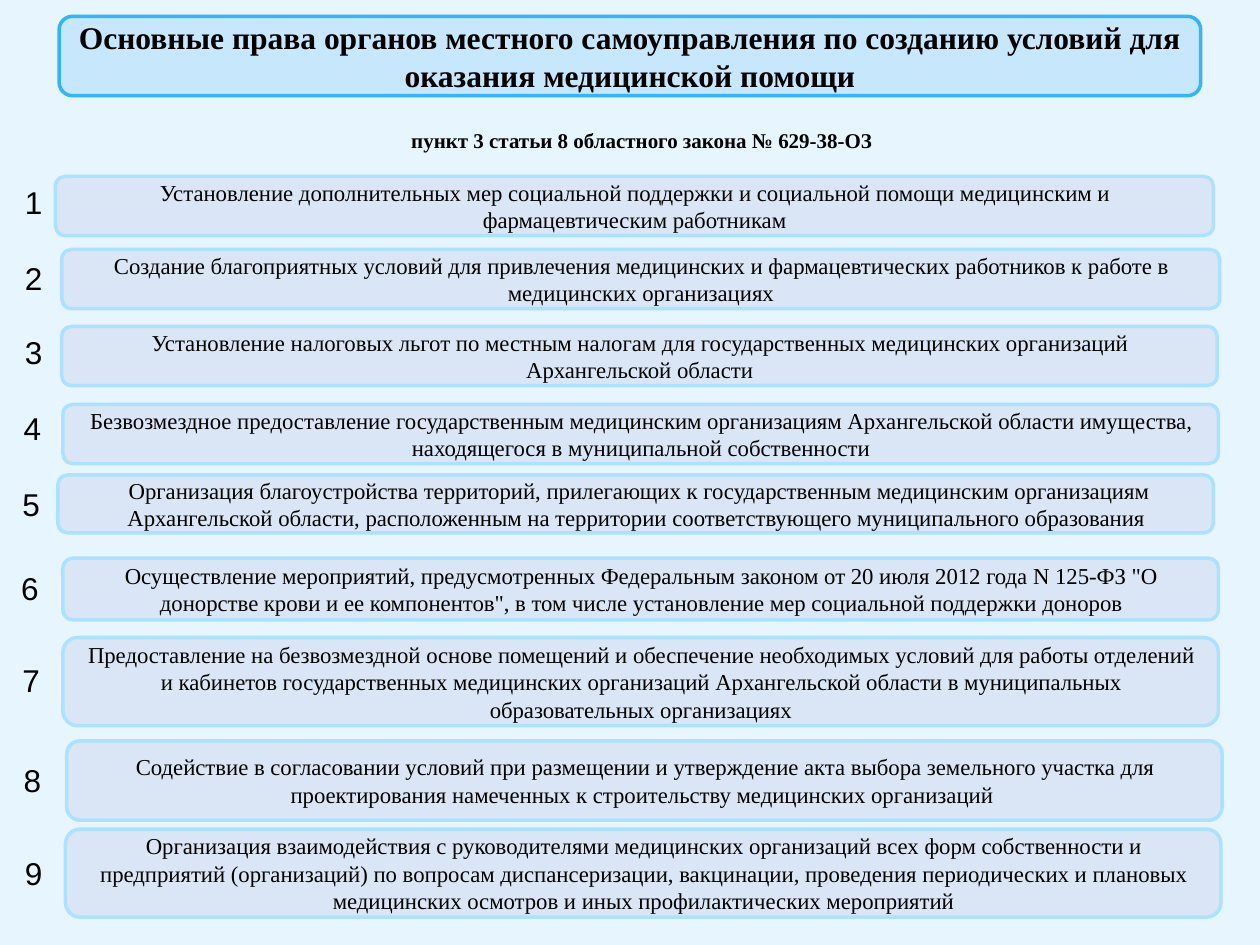
"""Build a slide listing the nine rights of local authorities in health care."""
from dataclasses import dataclass

from pptx import Presentation
from pptx.dml.color import RGBColor
from pptx.enum.shapes import MSO_SHAPE as Shape
from pptx.enum.text import MSO_ANCHOR as Anchor, MSO_AUTO_SIZE as AutoSize, PP_ALIGN as Align
from pptx.util import Inches, Pt


@dataclass(frozen=True)
class Theme:
    background: str = "E6F5FE"
    title_fill: str = "C6E7FC"
    title_line: str = "31B6FD"
    right_fill: str = "DAE6F6"
    right_line: str = "ADE2FE"
    ink: str = "000000"
    serif: str = "Times New Roman"
    sans: str = "Arial"
    title_size: int = 18
    law_size: int = 12
    right_size: int = 13
    number_size: int = 18
    line_width: int = 2


@dataclass(frozen=True)
class Box:
    col: int
    row: int
    cols: int
    rows: int


@dataclass(frozen=True)
class Right:
    box: Box
    number_col: int
    number_row: int
    text: str


THEME = Theme()
COLS, ROWS = 1000, 750
WIDTH, HEIGHT = Inches(10), Inches(7.5)

TITLE = "Основные права органов местного самоуправления по созданию условий для оказания медицинской помощи"
LAW = " пункт 3 статьи 8 областного закона № 629-38-ОЗ"
RIGHTS = [
    Right(Box(44, 140, 919, 47), 10, 140,
          "Установление дополнительных мер социальной поддержки и социальной помощи "
          "медицинским и фармацевтическим работникам"),
    Right(Box(49, 198, 919, 47), 10, 201,
          "Создание благоприятных условий для привлечения медицинских и фармацевтических "
          "работников к работе в медицинских организациях"),
    Right(Box(49, 259, 917, 47), 10, 259,
          "Установление налоговых льгот по местным налогам для государственных "
          "медицинских организаций Архангельской области"),
    Right(Box(50, 321, 917, 47), 9, 320,
          "Безвозмездное предоставление государственным медицинским организациям "
          "Архангельской области имущества, находящегося в муниципальной собственности"),
    Right(Box(46, 377, 917, 46), 8, 380,
          " Организация благоустройства территорий, прилегающих к государственным "
          "медицинским организациям Архангельской области, расположенным на территории "
          "соответствующего муниципального образования"),
    Right(Box(50, 443, 917, 49), 7, 447,
          "Осуществление мероприятий, предусмотренных Федеральным законом от 20 июля "
          "2012 года N 125-ФЗ \"О донорстве крови и ее компонентов\", в том числе "
          "установление мер социальной поддержки доноров"),
    Right(Box(50, 506, 917, 70), 8, 520,
          "Предоставление на безвозмездной основе помещений и обеспечение необходимых "
          "условий для работы отделений и кабинетов государственных медицинских "
          "организаций Архангельской области в муниципальных образовательных организациях"),
    Right(Box(53, 588, 917, 63), 9, 599,
          "Содействие в согласовании условий при размещении и утверждение акта выбора "
          "земельного участка для проектирования намеченных к строительству медицинских "
          "организаций "),
    Right(Box(52, 658, 917, 70), 10, 673,
          "Организация взаимодействия с руководителями медицинских организаций всех форм "
          "собственности и предприятий (организаций) по вопросам диспансеризации, "
          "вакцинации, проведения периодических и плановых медицинских осмотров и иных "
          "профилактических мероприятий"),
]


def place(box: Box) -> tuple[int, int, int, int]:
    """Turn grid columns and rows into slide lengths."""
    return (WIDTH * box.col // COLS, HEIGHT * box.row // ROWS,
            WIDTH * box.cols // COLS, HEIGHT * box.rows // ROWS)


def write(sp, text: str, size: int, font: str, align: Align, anchor: Anchor,
          bold: bool = False, wrap: bool = True) -> None:
    """Set and format the single paragraph of a shape."""
    tf = sp.text_frame
    tf.word_wrap = wrap
    tf.vertical_anchor = anchor
    p = tf.paragraphs[0]
    p.text = text
    p.alignment = align
    for r in p.runs:
        r.font.size = Pt(size)
        r.font.name = font
        r.font.bold = bold
        r.font.color.rgb = RGBColor.from_string(THEME.ink)


def add_panel(s, box: Box, text: str, size: int, fill: str, line: str, bold: bool = False) -> None:
    """Draw a rounded panel with centred text."""
    sp = s.shapes.add_shape(Shape.ROUNDED_RECTANGLE, *place(box))
    sp.shadow.inherit = False
    sp.fill.solid()
    sp.fill.fore_color.rgb = RGBColor.from_string(fill)
    sp.line.color.rgb = RGBColor.from_string(line)
    sp.line.width = Pt(THEME.line_width)
    write(sp, text, size, THEME.serif, Align.CENTER, Anchor.MIDDLE, bold)


def add_label(s, box: Box, text: str, size: int, font: str, align: Align, anchor: Anchor,
              bold: bool = False, wrap: bool = True) -> None:
    """Draw a text box that grows with its text."""
    sp = s.shapes.add_textbox(*place(box))
    write(sp, text, size, font, align, anchor, bold, wrap)
    sp.text_frame.auto_size = AutoSize.SHAPE_TO_FIT_TEXT


def main() -> None:
    """Build and save the slide."""
    prs = Presentation()
    prs.slide_width, prs.slide_height = WIDTH, HEIGHT
    s = prs.slides.add_slide(prs.slide_layouts[6])
    s.background.fill.solid()
    s.background.fill.fore_color.rgb = RGBColor.from_string(THEME.background)

    add_panel(s, Box(47, 13, 906, 63), TITLE, THEME.title_size,
              THEME.title_fill, THEME.title_line, bold=True)
    add_label(s, Box(31, 96, 953, 30), LAW, THEME.law_size, THEME.serif,
              Align.CENTER, Anchor.MIDDLE, bold=True)
    for number, right in enumerate(RIGHTS, start=1):
        add_panel(s, right.box, right.text, THEME.right_size, THEME.right_fill, THEME.right_line)
        add_label(s, Box(right.number_col, right.number_row, 34, 40), str(number),
                  THEME.number_size, THEME.sans, Align.LEFT, Anchor.TOP, wrap=False)
    prs.save("out.pptx")


if __name__ == "__main__":
    main()
